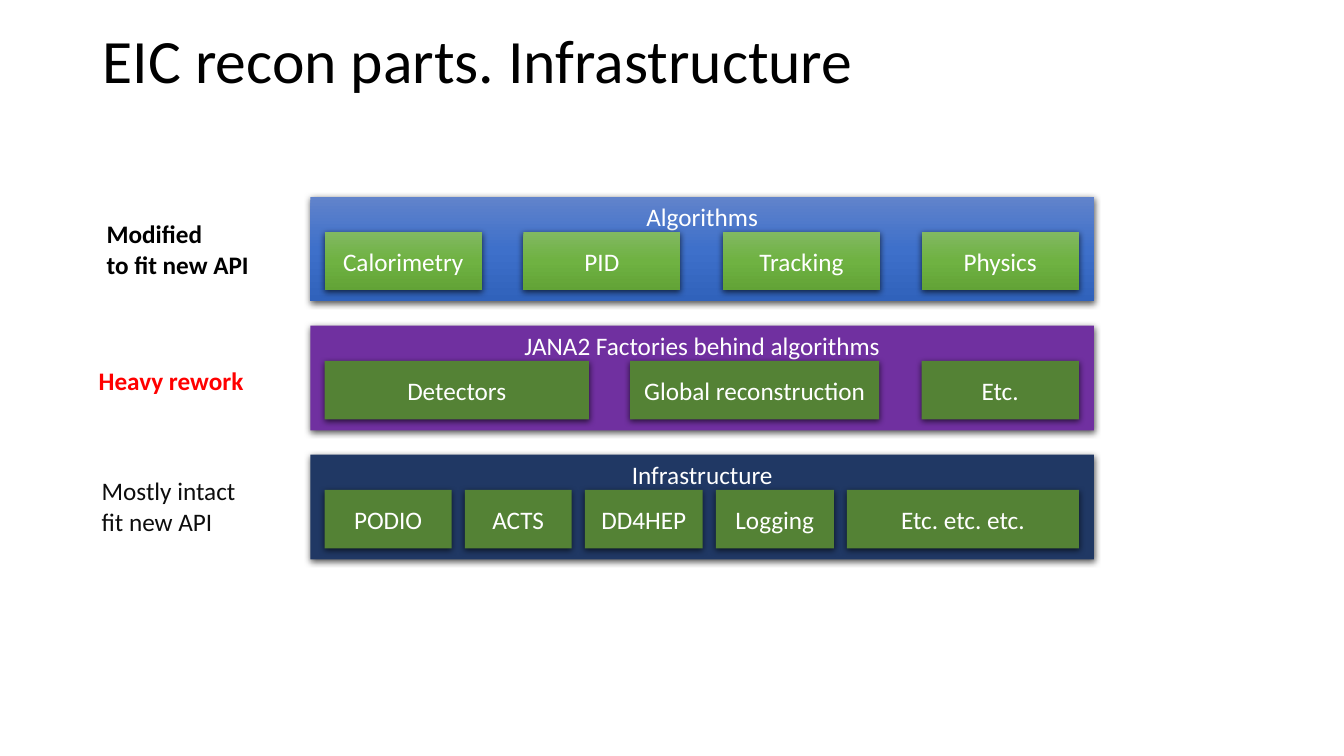
import copy

import lxml.etree
import pptx
import pptx.dml.color
import pptx.enum.shapes
import pptx.enum.text
import pptx.oxml
import pptx.oxml.ns
import pptx.util

PX = 9144  # EMU in one px, 100 px to the inch
FONT = "Calibri"
COLORS = {
    "black": "000000", "soft_black": "0D0D0D", "white": "FFFFFF", "red": "FF0000",
    "purple": "7030A0", "navy": "203864", "green": "548235",
}
GRADIENTS = {
    "blue_fade": ("6183CB", "3E70CA", "3062BB"),
    "green_fade": ("81B861", "6FB242", "62A336"),
}
BAND_LEFT, BAND_TOP, BAND_WIDTH, BAND_HEIGHT, BAND_STEP = 308, 195, 777, 104, 128
PART_OFFSET, PART_HEIGHT = 35, 58

# Band title, band fill, part fill, parts as (text, left, width)
BANDS = [
    ("Algorithms", "blue_fade", "green_fade",
     [("Calorimetry", 322, 156), ("PID", 519, 156),
      ("Tracking", 717, 156), ("Physics", 914, 156)]),
    ("JANA2 Factories behind algorithms", "purple", "green",
     [("Detectors", 322, 262), ("Global reconstruction", 625, 247), ("Etc.", 914, 156)]),
    ("Infrastructure", "navy", "green",
     [("PODIO", 322, 126), ("ACTS", 461, 106), ("DD4HEP", 580, 117),
      ("Logging", 710, 117), ("Etc. etc. etc.", 840, 230)]),
]
# Lines, left, top, width, height, color, bold
LABELS = [
    (["Modified", "to fit new API"], 96, 212, 163, 71, "black", True),
    (["Heavy rework"], 88, 358, 165, 40, "red", True),
    (["Mostly intact", "fit new API"], 91, 467, 154, 71, "soft_black", False),
]


def rgb(value):
    return pptx.dml.color.RGBColor.from_string(value)


def place(shape, left, top, width, height):
    shape.left, shape.top = left * PX, top * PX
    shape.width, shape.height = width * PX, height * PX


def add_span(para, text, size, color, bold=False):
    span = para.add_run()
    span.text = text
    span.font.name = FONT
    span.font.size = pptx.util.Pt(size)
    span.font.bold = bold
    span.font.color.rgb = rgb(COLORS[color])


def paint(shape, fill_name):
    fill = shape.fill
    if fill_name in COLORS:
        fill.solid()
        fill.fore_color.rgb = rgb(COLORS[fill_name])
        return
    fill.gradient()
    fill.gradient_angle = 270
    stop_list = shape._element.spPr.find(".//" + pptx.oxml.ns.qn("a:gsLst"))
    stop_list.append(copy.deepcopy(stop_list[0]))
    for stop, position, value in zip(fill.gradient_stops, (0, 0.5, 1), GRADIENTS[fill_name]):
        stop.position = position
        stop.color.rgb = rgb(value)


def add_shadow(shape):
    shape.shadow.inherit = False
    effects = shape._element.spPr.find(pptx.oxml.ns.qn("a:effectLst"))
    outer = lxml.etree.SubElement(
        effects, pptx.oxml.ns.qn("a:outerShdw"), blurRad="57150", dist="19050",
        dir="5400000", algn="ctr", rotWithShape="0")
    color = lxml.etree.SubElement(outer, pptx.oxml.ns.qn("a:srgbClr"), val=COLORS["black"])
    lxml.etree.SubElement(color, pptx.oxml.ns.qn("a:alpha"), val="63000")


def add_block(page, text, left, top, width, height, fill_name, anchor):
    block = page.shapes.add_shape(
        pptx.enum.shapes.MSO_SHAPE.RECTANGLE, left * PX, top * PX, width * PX, height * PX)
    paint(block, fill_name)
    block.line.fill.background()
    add_shadow(block)
    frame = block.text_frame
    frame.word_wrap = True
    frame.vertical_anchor = anchor
    para = frame.paragraphs[0]
    para.alignment = pptx.enum.text.PP_ALIGN.CENTER
    add_span(para, text, 18, "white")


def add_band(page, index, title, band_fill, part_fill, parts):
    top = BAND_TOP + index * BAND_STEP
    add_block(page, title, BAND_LEFT, top, BAND_WIDTH, BAND_HEIGHT, band_fill,
              pptx.enum.text.MSO_ANCHOR.TOP)
    for text, left, width in parts:
        add_block(page, text, left, top + PART_OFFSET, width, PART_HEIGHT, part_fill,
                  pptx.enum.text.MSO_ANCHOR.MIDDLE)


def add_label(page, lines, left, top, width, height, color, bold):
    box = page.shapes.add_textbox(left * PX, top * PX, width * PX, height * PX)
    box.text_frame.word_wrap = False
    box.text_frame.auto_size = pptx.enum.text.MSO_AUTO_SIZE.SHAPE_TO_FIT_TEXT
    para = box.text_frame.paragraphs[0]
    for number, line in enumerate(lines):
        if number:
            para.add_line_break()
        add_span(para, line, 18, color, bold)


def set_title(page, text):
    title = page.shapes.title
    place(title, 92, -9, 1150, 145)
    frame = title.text_frame
    frame.auto_size = pptx.enum.text.MSO_AUTO_SIZE.NONE
    frame.vertical_anchor = pptx.enum.text.MSO_ANCHOR.MIDDLE
    para = frame.paragraphs[0]
    para.alignment = pptx.enum.text.PP_ALIGN.LEFT
    para.line_spacing = 0.9
    add_span(para, text, 44, "black")


def main():
    deck = pptx.Presentation()
    deck.slide_width, deck.slide_height = 1333 * PX, 750 * PX
    page = deck.slides.add_slide(deck.slide_layouts[5])

    set_title(page, "EIC recon parts. Infrastructure")

    # Layers of the software stack
    for index, band in enumerate(BANDS):
        add_band(page, index, *band)

    # Amount of work, left of each layer
    for label in LABELS:
        add_label(page, *label)

    deck.save("out.pptx")


if __name__ == "__main__":
    main()
